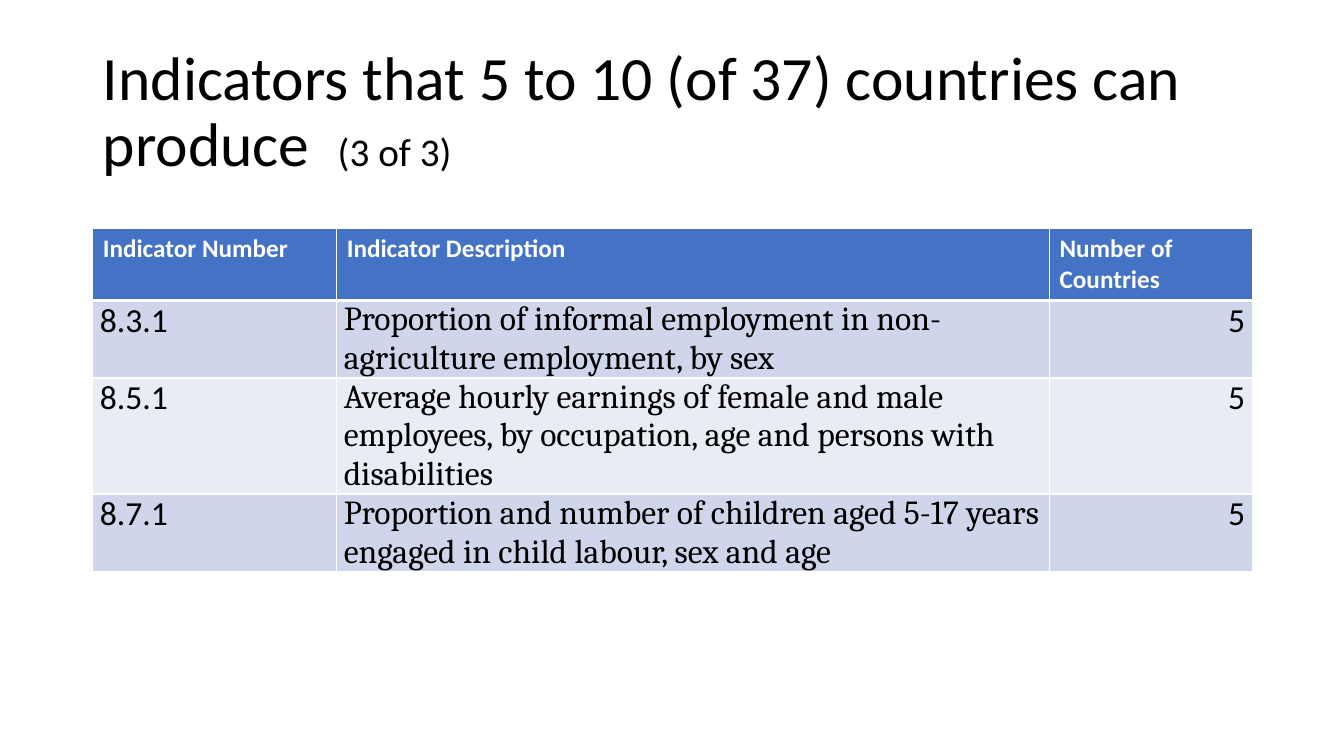
from lxml import etree
from pptx import Presentation
from pptx.dml.color import RGBColor
from pptx.enum.text import MSO_ANCHOR, MSO_AUTO_SIZE, PP_ALIGN
from pptx.oxml.ns import qn
from pptx.util import Inches, Pt

LEFT, RIGHT = PP_ALIGN.LEFT, PP_ALIGN.RIGHT
TOP, MIDDLE = MSO_ANCHOR.TOP, MSO_ANCHOR.MIDDLE
NO_FIT = MSO_AUTO_SIZE.NONE

TITLE = [("Indicators that 5 to 10 (of 37) countries can produce  ", 44), ("(3 of 3)", 28)]
HEADER = ("Indicator Number", "Indicator Description", "Number of Countries")
INDICATORS = [
    ("8.3.1", "Proportion of informal employment in non-agriculture employment, by sex", "5"),
    ("8.5.1", "Average hourly earnings of female and male employees, by occupation, age and persons with disabilities", "5"),
    ("8.7.1", "Proportion and number of children aged 5-17 years engaged in child labour, sex and age", "5"),
]
COLORS = {"text": "000000", "white": "FFFFFF", "header": "4472C4", "odd": "CFD5EA", "even": "E9EBF5"}
WIDTH, HEIGHT = 13.33, 7.5
MARGIN, CONTENT = 0.92, 11.5
COLUMNS = (2.42, 7.07, 2.01)
ROWS = (0.7, 0.77, 1.15, 0.77)
COLUMN_STYLES = (("Calibri", LEFT, TOP), ("Cambria", LEFT, MIDDLE), ("Calibri", RIGHT, TOP))
BODY_MARGINS = {"margin_left": Inches(0.07), "margin_right": Inches(0.07), "margin_top": 0, "margin_bottom": 0}


def rgb(name):
    return RGBColor.from_string(COLORS[name])


def add_run(p, text, size, font, color, bold=False):
    r = p.add_run()
    r.text = text
    for key, value in {"size": Pt(size), "name": font, "bold": bold}.items():
        setattr(r.font, key, value)
    r.font.color.rgb = rgb(color)


def set_borders(cell, row):
    widths = {"lnL": 1, "lnR": 1, "lnT": 3 if row == 1 else 1, "lnB": 3 if row == 0 else 1}
    tc_pr = cell._tc.get_or_add_tcPr()
    for tag, width in widths.items():
        ln = etree.SubElement(tc_pr, qn(f"a:{tag}"), w=str(Pt(width)))
        fill = etree.SubElement(ln, qn("a:solidFill"))
        etree.SubElement(fill, qn("a:srgbClr"), val=COLORS["white"])


def add_title(s):
    title = s.shapes.title
    box = {"left": MARGIN, "top": 0.4, "width": CONTENT, "height": 1.45}
    for key, value in box.items():
        setattr(title, key, Inches(value))
    tf = title.text_frame
    for key, value in {"word_wrap": True, "auto_size": NO_FIT, "vertical_anchor": MIDDLE}.items():
        setattr(tf, key, value)
    p = tf.paragraphs[0]
    p.alignment, p.line_spacing = LEFT, 0.9
    for text, size in TITLE:
        add_run(p, text, size, "Calibri", "text")


def add_indicators(s):
    data = [HEADER, *INDICATORS]
    table = s.shapes.add_table(len(data), len(COLUMNS), Inches(MARGIN), Inches(2.27),
                               Inches(CONTENT), Inches(sum(ROWS))).table
    for column, width in zip(table.columns, COLUMNS):
        column.width = Inches(width)
    for i, (values, height) in enumerate(zip(data, ROWS)):
        table.rows[i].height = Inches(height)
        for j, (text, (font, align, anchor)) in enumerate(zip(values, COLUMN_STYLES)):
            cell = table.cell(i, j)
            p = cell.text_frame.paragraphs[0]
            set_borders(cell, i)
            cell.fill.solid()
            if i == 0:
                cell.fill.fore_color.rgb = rgb("header")
                add_run(p, text, 18, "Calibri", "white", True)
                continue
            cell.fill.fore_color.rgb = rgb("odd" if i % 2 else "even")
            for key, value in BODY_MARGINS.items():
                setattr(cell, key, value)
            cell.vertical_anchor, p.alignment = anchor, align
            add_run(p, text, 24, font, "text")


def main():
    prs = Presentation()
    prs.slide_width, prs.slide_height = Inches(WIDTH), Inches(HEIGHT)
    s = prs.slides.add_slide(prs.slide_layouts[5])
    add_title(s)
    add_indicators(s)
    prs.save("out.pptx")


if __name__ == "__main__":
    main()
